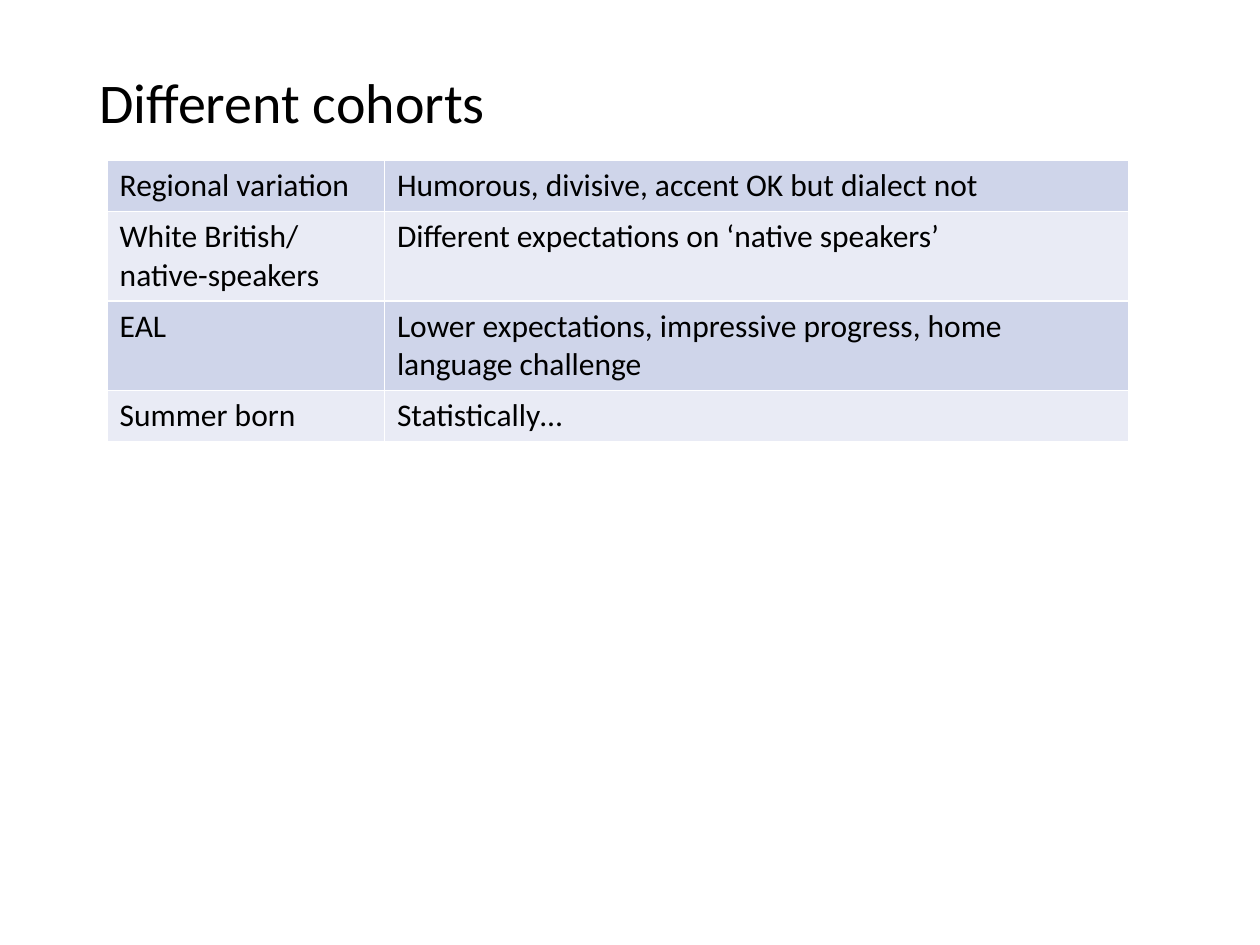
from dataclasses import dataclass

from lxml.etree import SubElement
from pptx import Presentation
from pptx.dml.color import RGBColor
from pptx.enum.text import MSO_ANCHOR, MSO_AUTO_SIZE, PP_ALIGN
from pptx.oxml.ns import qn
from pptx.util import Cm, Pt


@dataclass(frozen=True)
class Theme:
    face: str = "Calibri"
    ink: str = "000000"
    rule: str = "FFFFFF"
    bands: tuple = ("CFD5EA", "E9EBF5")
    head: int = 32
    body: int = 18


def apply(item, form):
    for key, value in form.items():
        setattr(item, key, value)


class Deck:
    def __init__(self, theme):
        self.theme = theme
        self.show = Presentation()
        apply(self.show, {"slide_width": Cm(25.4), "slide_height": Cm(19.05)})
        self.slide = self.show.slides.add_slide(self.show.slide_layouts[5])

    def style(self, para, size):
        apply(para.font, {"name": self.theme.face, "size": Pt(size), "bold": False})
        para.font.color.rgb = RGBColor.from_string(self.theme.ink)

    def title(self, text, left, top, width, height):
        shape = self.slide.shapes.title
        apply(shape, {"left": Cm(left), "top": Cm(top),
                      "width": Cm(width), "height": Cm(height)})
        frame = shape.text_frame
        frame.text = text
        apply(frame, {"word_wrap": True, "auto_size": MSO_AUTO_SIZE.NONE,
                      "vertical_anchor": MSO_ANCHOR.MIDDLE})
        para = frame.paragraphs[0]
        apply(para, {"alignment": PP_ALIGN.LEFT, "line_spacing": 0.9})
        self.style(para, self.theme.head)

    def border(self, cell):
        props = cell._tc.get_or_add_tcPr()
        for place, side in enumerate(("lnL", "lnR", "lnT", "lnB")):
            line = SubElement(props, qn(f"a:{side}"), w=str(Pt(1)))
            fill = SubElement(line, qn("a:solidFill"))
            SubElement(fill, qn("a:srgbClr"), val=self.theme.rule)
            props.insert(place, line)

    def table(self, rows, left, top, widths, height):
        table = self.slide.shapes.add_table(
            len(rows), len(widths), Cm(left), Cm(top),
            Cm(sum(widths)), Cm(height * len(rows))).table
        apply(table, {"first_row": False, "horz_banding": True})
        for column, width in zip(table.columns, widths):
            column.width = Cm(width)
        for r, texts in enumerate(rows):
            table.rows[r].height = Cm(height)
            for c, text in enumerate(texts):
                cell = table.cell(r, c)
                cell.text = text
                cell.fill.solid()
                band = self.theme.bands[r % 2]
                cell.fill.fore_color.rgb = RGBColor.from_string(band)
                self.border(cell)
                self.style(cell.text_frame.paragraphs[0], self.theme.body)


def main():
    deck = Deck(Theme())
    deck.title("Different cohorts", 1.75, 1.02, 21.9, 2.2)
    cohorts = [
        ("Regional variation", "Humorous, divisive, accent OK but dialect not"),
        ("White British/ native-speakers", "Different expectations on ‘native speakers’"),
        ("EAL", "Lower expectations, impressive progress, home language challenge"),
        ("Summer born", "Statistically…"),
    ]
    deck.table(cohorts, 2.16, 3.23, (5.59, 15), 1.03)
    deck.show.save("out.pptx")


if __name__ == "__main__":
    main()
